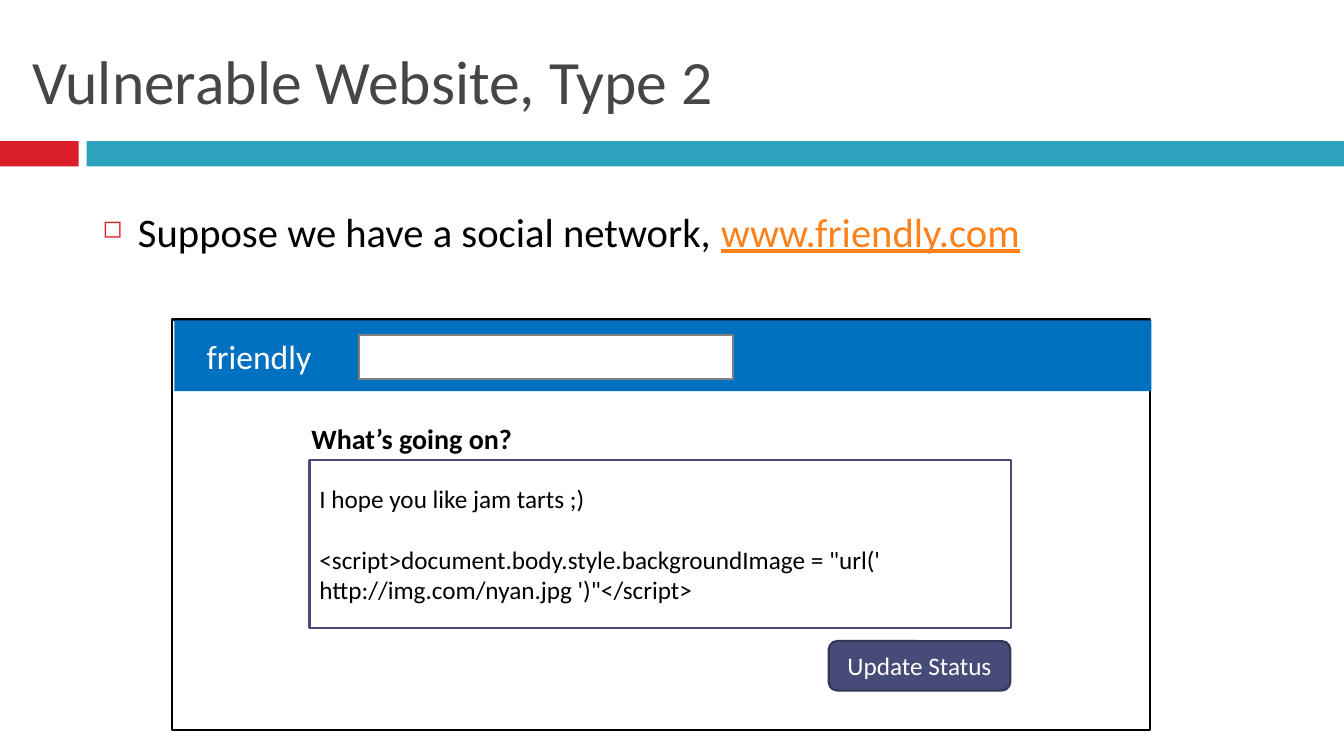
from dataclasses import dataclass

from lxml import etree
from pptx import Presentation
from pptx.dml.color import RGBColor
from pptx.enum.shapes import MSO_SHAPE
from pptx.enum.text import MSO_ANCHOR, PP_ALIGN
from pptx.oxml.ns import qn
from pptx.util import Inches, Pt

RECT, ROUND = MSO_SHAPE.RECTANGLE, MSO_SHAPE.ROUNDED_RECTANGLE
TOP, MIDDLE = MSO_ANCHOR.TOP, MSO_ANCHOR.MIDDLE
LEFT, CENTER = PP_ALIGN.LEFT, PP_ALIGN.CENTER


@dataclass(frozen=True)
class Theme:
    font: str = "Calibri"
    red: str = "DA1F28"
    teal: str = "2DA2BF"
    heading: str = "464646"
    link: str = "FF8119"
    black: str = "000000"
    white: str = "FFFFFF"
    header: str = "0070C0"
    grey: str = "808080"
    indigo: str = "474B78"
    indigo_dark: str = "353759"
    title_size: int = 44
    body_size: int = 29
    brand_size: int = 24
    label_size: int = 20
    small_size: int = 18


T = Theme()
prs = Presentation()
prs.slide_width, prs.slide_height = Inches(13.33), Inches(7.5)
s = prs.slides.add_slide(prs.slide_layouts[6])


def add_box(box, fill=None, line=None, shape=RECT, anchor=MIDDLE):
    """Add a flat shape, or a plain text box when there is no fill."""
    place = [Inches(v) for v in box]
    if fill is None:
        sp = s.shapes.add_textbox(*place)
    else:
        sp = s.shapes.add_shape(shape, *place)
        sp.shadow.inherit = False
        sp.fill.solid()
        sp.fill.fore_color.rgb = RGBColor.from_string(fill)
        if line:
            sp.line.color.rgb = RGBColor.from_string(line)
            sp.line.width = Pt(1.5)
        else:
            sp.line.fill.background()
    tf = sp.text_frame
    tf.word_wrap = True
    tf.vertical_anchor = anchor
    tf.paragraphs[0].alignment = LEFT
    return tf


def add_run(p, text, size, color, bold=False, underline=False):
    r = p.add_run()
    r.text = text
    f = r.font
    f.name, f.size, f.bold, f.underline = T.font, Pt(size), bold, underline
    f.color.rgb = RGBColor.from_string(color)


# Title and divider band
add_box((0, 1.4, 0.78, 0.25), T.red)
add_box((0.86, 1.4, 12.47, 0.25), T.teal)
title = add_box((0.22, 0.25, 12.89, 1.08))
add_run(title.paragraphs[0], "Vulnerable Website, Type 2", T.title_size, T.heading)

# Bulleted sentence
p = add_box((0.92, 2, 11.5, 0.8), anchor=TOP).paragraphs[0]
p.space_before = Pt(7)
pPr = p._p.get_or_add_pPr()
pPr.set("marL", str(Inches(0.35)))
pPr.set("indent", str(Inches(-0.35)))
bullet_color = etree.SubElement(pPr, qn("a:buClr"))
etree.SubElement(bullet_color, qn("a:srgbClr"), val=T.red)
etree.SubElement(pPr, qn("a:buSzPct"), val="60000")
etree.SubElement(pPr, qn("a:buChar"), char="◻")
add_run(p, "Suppose we have a social network, ", T.body_size, T.black)
add_run(p, "www.friendly.com", T.body_size, T.link, underline=True)

# Browser page with header and search field
add_box((1.71, 3.17, 9.7, 4.07), T.white, T.black)
header = add_box((1.73, 3.18, 9.69, 0.7), T.header)
header.margin_left = Inches(0.32)
add_run(header.paragraphs[0], "friendly", T.brand_size, T.white)
add_box((3.56, 3.32, 3.71, 0.44), T.white, T.grey)

# Status form
label = add_box((2.99, 4.13, 2.21, 0.44), anchor=TOP)
label.word_wrap = False
add_run(label.paragraphs[0], "What’s going on?", T.label_size, T.black, bold=True)

status = add_box((3.07, 4.56, 6.96, 1.67), T.white, T.indigo)
add_run(status.paragraphs[0], "I hope you like jam tarts ;)", T.small_size, T.black)
p = status.add_paragraph()
p.alignment = LEFT
p.space_before = Pt(22)
add_run(p, "<script>document.body.style.backgroundImage = \"url(' http://img.com/nyan.jpg ')\"</script>",
        T.small_size, T.black)

button = add_box((8.22, 6.36, 1.8, 0.49), T.indigo, T.indigo_dark, ROUND)
button.paragraphs[0].alignment = CENTER
add_run(button.paragraphs[0], "Update Status", T.small_size, T.white)

prs.save("out.pptx")
